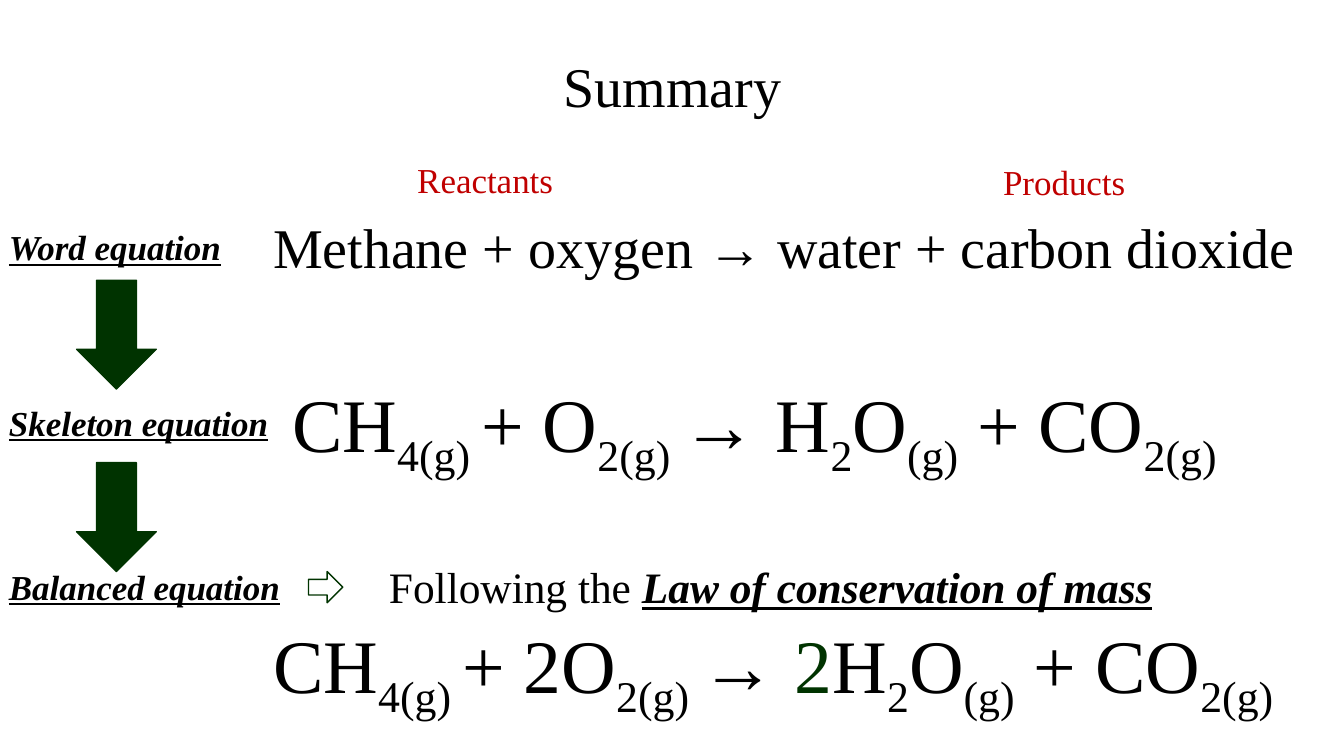
from pptx import Presentation
from pptx.dml.color import RGBColor
from pptx.enum.shapes import MSO_SHAPE
from pptx.enum.text import MSO_ANCHOR, PP_ALIGN
from pptx.util import Inches, Pt

DOWN_ARROW = MSO_SHAPE.DOWN_ARROW
RIGHT_ARROW = MSO_SHAPE.RIGHT_ARROW
MIDDLE = MSO_ANCHOR.MIDDLE
CENTER = PP_ALIGN.CENTER

FONT = "Times New Roman"
BLACK, WHITE, GREEN, RED = "000000", "FFFFFF", "003300", "C00000"


def color(hex_string):
    return RGBColor.from_string(hex_string)


def add_text(slide, box, size, runs, text_color=BLACK, wrap=False):
    """Each run is (text, style): style is "", "sub", "key" or "green"."""
    shape = slide.shapes.add_textbox(*[Inches(length) for length in box])
    shape.text_frame.word_wrap = wrap
    paragraph = shape.text_frame.paragraphs[0]
    for text, style in runs:
        run = paragraph.add_run()
        run.text = text
        run.font.name = FONT
        run.font.size = Pt(size)
        run.font.color.rgb = color(GREEN if style == "green" else text_color)
        if style == "key":
            run.font.bold = run.font.italic = run.font.underline = True
        if style == "sub":
            run.font._element.set("baseline", "-25000")
    return shape


presentation = Presentation()
presentation.slide_width = Inches(13.33)
presentation.slide_height = Inches(7.5)
slide = presentation.slides.add_slide(presentation.slide_layouts[6])

# Title
title = add_text(slide, (0.92, 0.4, 11.5, 0.98), 40, [("Summary", "")], wrap=True)
title.text_frame.vertical_anchor = MIDDLE
title.text_frame.paragraphs[0].alignment = CENTER
title.text_frame.paragraphs[0].line_spacing = 0.9

# Column headings
for text, left, top, width in [("Reactants", 4.04, 1.52, 1.6),
                               ("Products", 9.85, 1.54, 1.43)]:
    add_text(slide, (left, top, width, 0.52), 25, [(text, "")], RED)

# Step labels
for text, top, width, wrap in [("Word equation", 2.19, 2.33, False),
                               ("Skeleton equation", 3.93, 2.89, False),
                               ("Balanced equation", 5.56, 3.07, True)]:
    add_text(slide, (-0.01, top, width, 0.52), 25, [(text, "key")], wrap=wrap)

# Equations
add_text(slide, (2.61, 2.06, 10.45, 0.77), 40,
         [("Methane + oxygen → water + carbon dioxide", "")])

reactant_start = [("CH", ""), ("4(g) ", "sub")]
product_end = [("2", "sub"), ("O", ""), ("(g)", "sub"),
               (" + CO", ""), ("2(g)", "sub")]
add_text(slide, (2.8, 3.69, 10.06, 1.01), 54,
         reactant_start + [("+ O", ""), ("2(g) ", "sub"), ("→ H", "")] + product_end)
add_text(slide, (2.61, 6.08, 10.82, 1.01), 54,
         reactant_start + [("+ 2O", ""), ("2(g) ", "sub"), ("→ ", ""),
                           ("2", "green"), ("H", "")] + product_end)

# Conservation law
add_text(slide, (3.76, 5.51, 7.86, 0.62), 31,
         [("Following the ", ""), ("Law of conservation of mass", "key")])

# Arrows
for kind, left, top, width, height, fill in [
        (DOWN_ARROW, 0.76, 2.78, 0.79, 1.08, GREEN),
        (DOWN_ARROW, 0.76, 4.59, 0.79, 1.08, GREEN),
        (RIGHT_ARROW, 3.06, 5.67, 0.34, 0.31, WHITE)]:
    arrow = slide.shapes.add_shape(kind, Inches(left), Inches(top),
                                   Inches(width), Inches(height))
    arrow.shadow.inherit = False
    arrow.fill.solid()
    arrow.fill.fore_color.rgb = color(fill)
    arrow.line.color.rgb = color(GREEN)
    arrow.line.width = Pt(1)

presentation.save("out.pptx")
